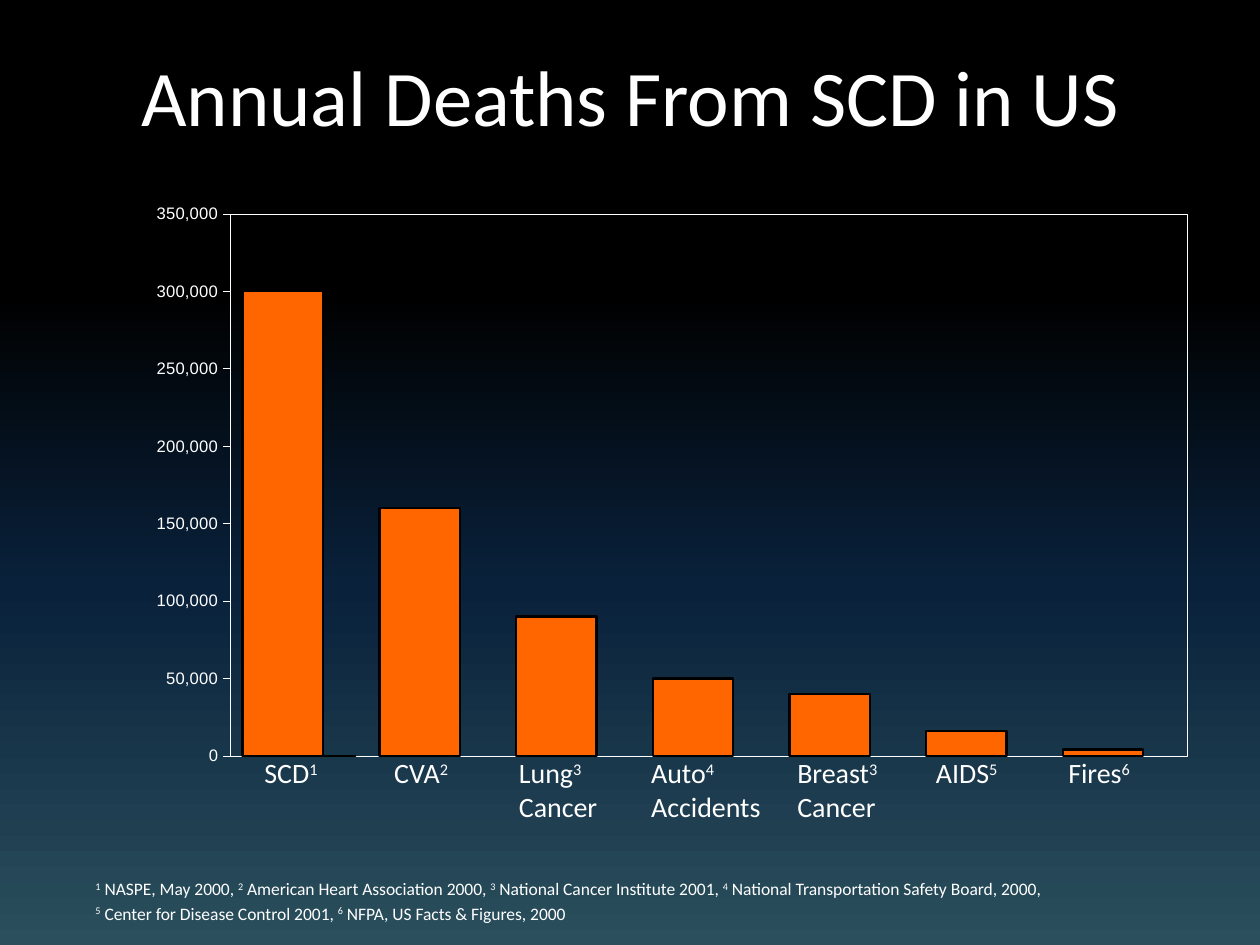
"""Build a slide with a column chart of annual deaths by cause."""
from copy import deepcopy
from dataclasses import dataclass

from pptx import Presentation
from pptx.chart.data import CategoryChartData
from pptx.dml.color import RGBColor
from pptx.enum.chart import XL_CHART_TYPE, XL_TICK_MARK
from pptx.enum.text import MSO_ANCHOR, MSO_AUTO_SIZE, PP_ALIGN
from pptx.oxml import parse_xml
from pptx.oxml.ns import nsdecls, qn
from pptx.slide import Slide
from pptx.text.text import Font, TextFrame
from pptx.util import Inches, Pt

COLORS = {
    "white": "FFFFFF",
    "black": "000000",
    "navy": "09213B",
    "teal": "2B4F5D",
    "orange": "FF6600",
    "yellow": "FCF305",
}
BACKGROUND_STOPS = [(0, "black"), (0.31, "black"), (0.62, "navy"), (1, "teal")]
DEATHS = [300000, 160000, 90000, 50000, 40000, 16000, 4000]
PLOT_LAYOUT = {"x": 0.117, "y": 0.087, "w": 0.862, "h": 0.837}
LABEL_TOP = 5.95


@dataclass
class TextItem:
    """Text whose superscripts stand between carets."""

    left: float
    top: float
    width: float
    height: float
    paragraphs: list[str]
    size: float = 16


TEXT_ITEMS = [
    TextItem(2, LABEL_TOP, 0.81, 0.37, ["SCD^1^"]),
    TextItem(3.03, LABEL_TOP, 0.89, 0.37, ["CVA^2^"]),
    TextItem(4.02, LABEL_TOP, 1.05, 0.64, ["Lung^3^ Cancer"]),
    TextItem(5.07, LABEL_TOP, 1.17, 0.64, ["Auto^4^ Accidents"]),
    TextItem(6.23, LABEL_TOP, 0.94, 0.64, ["Breast^3^ Cancer"]),
    TextItem(7.33, LABEL_TOP, 0.89, 0.37, ["AIDS^5^"]),
    TextItem(8.38, LABEL_TOP, 0.89, 0.37, ["Fires^6^"]),
    TextItem(0.66, 6.92, 8.04, 0.63, [
        "^1^ NASPE, May 2000, ^2^ American Heart Association 2000, "
        "^3^ National Cancer Institute 2001, "
        "^4^ National Transportation Safety Board, 2000,",
        "^5^ Center for Disease Control 2001, ^6^ NFPA, US Facts & Figures, 2000",
    ], 10),
]


def color(name: str) -> RGBColor:
    """Look up a named color."""
    return RGBColor.from_string(COLORS[name])


def apply(target: object, values: dict) -> None:
    """Set each attribute on the target."""
    for name, value in values.items():
        setattr(target, name, value)


def format_font(font: Font, size: float, name: str = "Calibri") -> None:
    """Give a font its size, face and white color."""
    apply(font, {"size": Pt(size), "name": name, "bold": False})
    font.color.rgb = color("white")


def paint_background(page: Slide) -> None:
    """Fill the page with the vertical gradient."""
    fill = page.background.fill
    fill.gradient()
    fill.gradient_angle = 270
    stop_list = next(page.element.iter(qn("a:gsLst")))
    while len(stop_list) < len(BACKGROUND_STOPS):
        stop_list.append(deepcopy(stop_list[0]))
    for stop, (position, name) in zip(fill.gradient_stops, BACKGROUND_STOPS):
        stop.position = position
        stop.color.rgb = color(name)


def write_text(frame: TextFrame, paragraphs: list[str], size: float) -> None:
    """Write paragraphs, raising the spans between carets."""
    for index, text in enumerate(paragraphs):
        para = frame.add_paragraph() if index else frame.paragraphs[0]
        if index:
            para.space_before = Pt(size * 0.2)
        for order, part in enumerate(text.split("^")):
            if not part:
                continue
            span = para.add_run()
            span.text = part
            format_font(span.font, size)
            if order % 2:
                span._r.get_or_add_rPr().set("baseline", "30000")


def add_text(page: Slide, item: TextItem) -> None:
    """Add one wrapped text box."""
    box = page.shapes.add_textbox(*map(Inches, (item.left, item.top, item.width, item.height)))
    box.text_frame.word_wrap = True
    write_text(box.text_frame, item.paragraphs, item.size)


def add_title(page: Slide) -> None:
    """Place and write the title."""
    title = page.shapes.title
    apply(title, {"left": Inches(0.5), "top": Inches(0.3),
                  "width": Inches(9), "height": Inches(1.25)})
    frame = title.text_frame
    apply(frame, {"auto_size": MSO_AUTO_SIZE.NONE, "word_wrap": True,
                  "vertical_anchor": MSO_ANCHOR.TOP, "margin_top": Inches(0.08)})
    write_text(frame, ["Annual Deaths From SCD in US"], 45)
    frame.paragraphs[0].alignment = PP_ALIGN.CENTER


def add_deaths_chart(page: Slide) -> None:
    """Add the column chart with its framed plot area."""
    data = CategoryChartData(number_format="#,##0")
    data.categories = [str(number) for number in range(1, len(DEATHS) + 1)]
    data.add_series("Series 1", DEATHS)
    data.add_series("Series 2", [0] + [None] * (len(DEATHS) - 1))
    chart = page.shapes.add_chart(
        XL_CHART_TYPE.COLUMN_CLUSTERED,
        *map(Inches, (0.8, 1.25, 8.81, 5.14)), data).chart
    apply(chart, {"has_title": False, "has_legend": False})
    format_font(chart.font, 9.5, "Arial")

    plot = chart.plots[0]
    apply(plot, {"gap_width": 30, "overlap": 60, "vary_by_categories": False})
    for series, name in zip(plot.series, ("orange", "yellow")):
        series.format.fill.solid()
        series.format.fill.fore_color.rgb = color(name)
        series.format.line.color.rgb = color("black")
        series.format.line.width = Pt(1.41)

    chart.category_axis.visible = False
    axis = chart.value_axis
    apply(axis, {"minimum_scale": 0, "maximum_scale": 350000, "major_unit": 50000,
                 "has_major_gridlines": False, "major_tick_mark": XL_TICK_MARK.OUTSIDE,
                 "minor_tick_mark": XL_TICK_MARK.NONE})
    apply(axis.tick_labels, {"number_format": "#,##0", "number_format_is_linked": False})
    format_font(axis.tick_labels.font, 9.5, "Arial")
    axis.format.line.color.rgb = color("white")
    axis.format.line.width = Pt(0.35)
    frame_plot_area(chart.element.find(".//" + qn("c:plotArea")))


def frame_plot_area(area) -> None:
    """Fix the inner plot area and outline it in white."""
    modes = "".join(f'<c:{side}Mode val="edge"/>' for side in "xy")
    sizes = "".join(f'<c:{key} val="{value}"/>' for key, value in PLOT_LAYOUT.items())
    layout = area.find(qn("c:layout"))
    if layout is not None:
        area.remove(layout)
    area.insert(0, parse_xml(
        f'<c:layout {nsdecls("c")}><c:manualLayout><c:layoutTarget val="inner"/>'
        f"{modes}{sizes}</c:manualLayout></c:layout>"))
    area.append(parse_xml(
        f'<c:spPr {nsdecls("c", "a")}><a:noFill/><a:ln w="{Pt(0.35)}"><a:solidFill>'
        f'<a:srgbClr val="{COLORS["white"]}"/></a:solidFill></a:ln></c:spPr>'))


def main() -> None:
    """Assemble and save the deck."""
    deck = Presentation()
    apply(deck, {"slide_width": Inches(10), "slide_height": Inches(7.5)})
    page = deck.slides.add_slide(deck.slide_layouts[5])
    paint_background(page)
    add_title(page)
    add_deaths_chart(page)
    for item in TEXT_ITEMS:
        add_text(page, item)
    deck.save("out.pptx")


if __name__ == "__main__":
    main()
